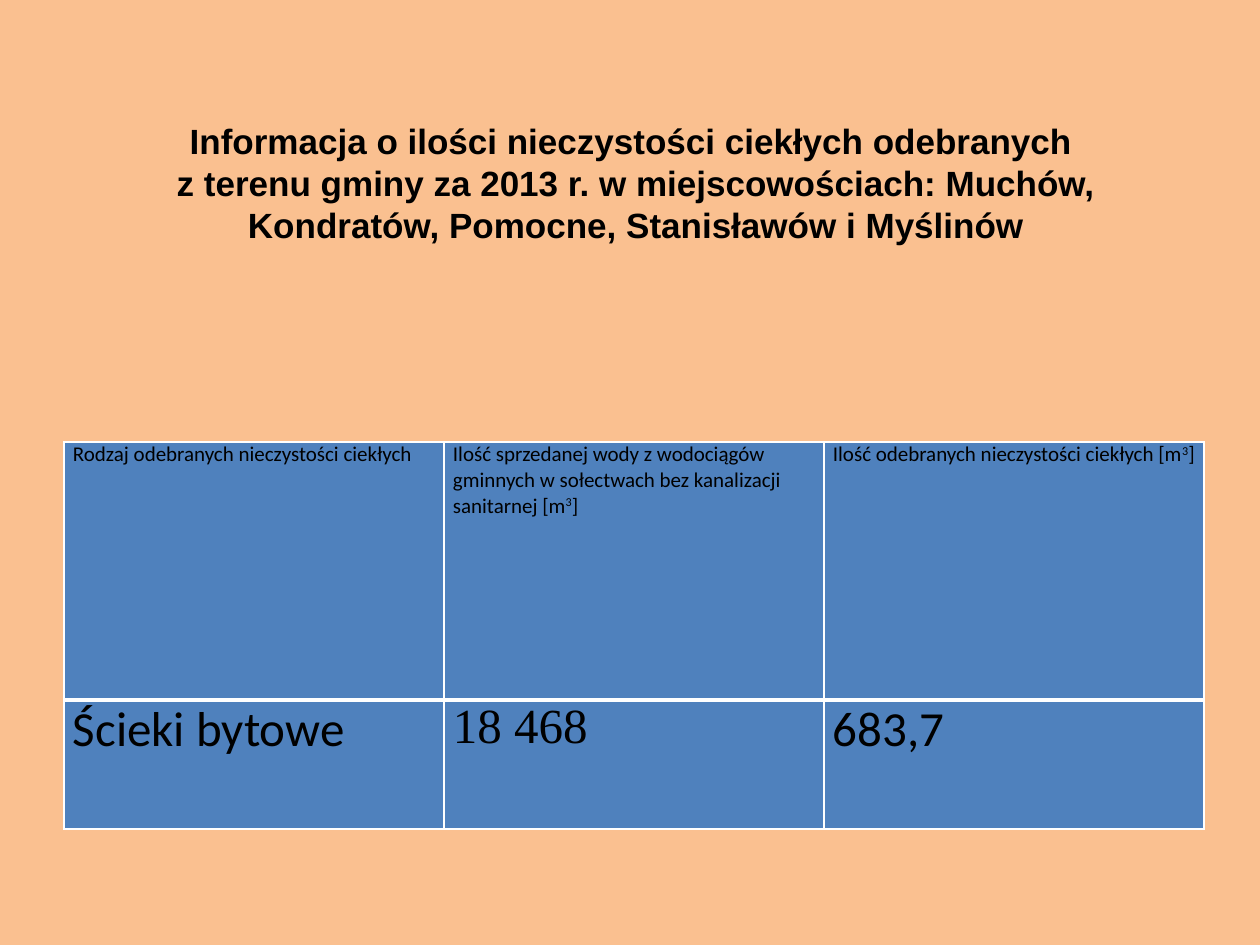
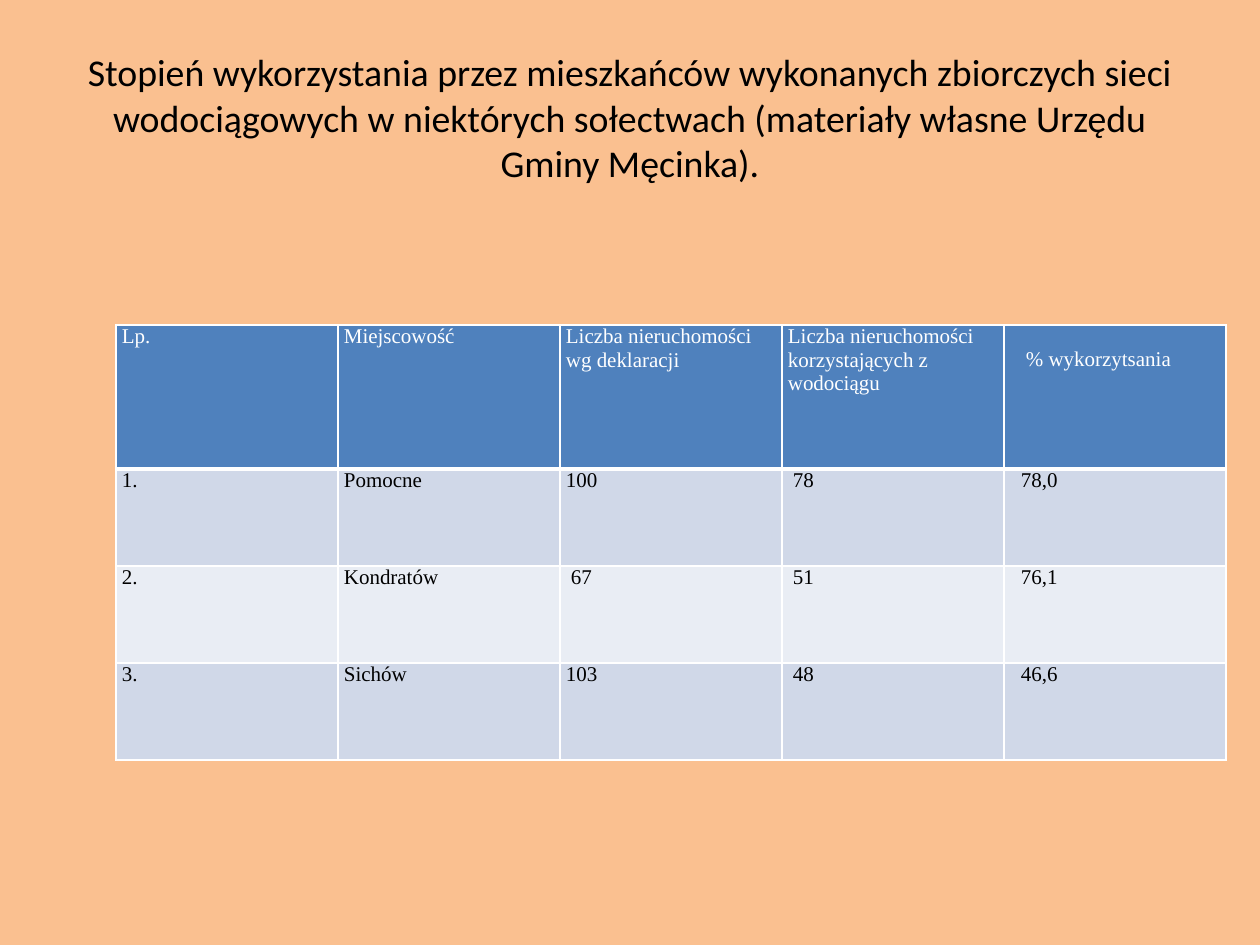
from lxml.etree import SubElement
from pptx import Presentation
from pptx.dml.color import RGBColor
from pptx.enum.text import MSO_ANCHOR, PP_ALIGN
from pptx.oxml import parse_xml
from pptx.oxml.ns import nsdecls
from pptx.util import Pt

PX = 914400 / 126
PEACH = RGBColor(0xFA, 0xC0, 0x90)
BLUE = RGBColor(0x4F, 0x81, 0xBD)
BAND_DARK = RGBColor(0xD0, 0xD8, 0xE8)
BAND_LIGHT = RGBColor(0xE9, 0xED, 0xF4)
BLACK = RGBColor(0, 0, 0)
WHITE = RGBColor(0xFF, 0xFF, 0xFF)
SANS, ARIAL, SERIF = "Calibri", "Arial", "Times New Roman"


def px(n):
    return round(n * PX)


def write(p, text, font=SANS, size=12, color=BLACK, bold=False, align=None):
    p.alignment = align
    for i, part in enumerate(text.split("^")):
        r = p.add_run()
        r.text = part
        r.font.name, r.font.size, r.font.bold = font, Pt(size), bold
        r.font.color.rgb = color
        if i % 2:
            r.font._element.set("baseline", "30000")


def add_slide(prs):
    s = prs.slides.add_slide(prs.slide_layouts[6])
    s.background.fill.solid()
    s.background.fill.fore_color.rgb = PEACH
    return s


def add_title(s, box, lines, anchor, **fmt):
    tf = s.shapes.add_textbox(*map(px, box)).text_frame
    tf.word_wrap = True
    tf.vertical_anchor = anchor
    for i, line in enumerate(lines):
        p = tf.add_paragraph() if i else tf.paragraphs[0]
        write(p, line, align=PP_ALIGN.CENTER, **fmt)


def set_borders(cell, top=1, bottom=1):
    tcPr = cell._tc.get_or_add_tcPr()
    widths = {"lnL": 1, "lnR": 1, "lnT": top, "lnB": bottom}
    for i, (side, width) in enumerate(widths.items()):
        ln = parse_xml(f'<a:{side} {nsdecls("a")} w="{Pt(width)}"/>')
        fill = SubElement(ln, ln.tag.replace(side, "solidFill"))
        SubElement(fill, ln.tag.replace(side, "srgbClr"), val=str(WHITE))
        tcPr.insert(i, ln)


def add_table(s, left, top, col_width, heights, n_cols):
    shape = s.shapes.add_table(len(heights), n_cols, px(left), px(top),
                               px(col_width * n_cols), px(sum(heights)))
    table = shape.table
    table.first_row = table.horz_banding = False
    for col in table.columns:
        col.width = px(col_width)
    for row, height in zip(table.rows, heights):
        row.height = px(height)
    return table


def fill_cell(cell, text, fill, inset, indent=0, drop=0, top=1, bottom=1, **fmt):
    cell.margin_left, cell.margin_right = px(inset + indent), px(inset)
    cell.margin_top, cell.margin_bottom = px(drop), 0
    cell.fill.solid()
    cell.fill.fore_color.rgb = fill
    set_borders(cell, top, bottom)
    write(cell.text_frame.paragraphs[0], text, **fmt)


def waste_slide(prs):
    s = add_slide(prs)
    add_title(s, (105, 113, 1062, 178),
              ["Informacja o ilości nieczystości ciekłych odebranych ",
               "z terenu gminy za 2013 r. w miejscowościach: Muchów, "
               "Kondratów, Pomocne, Stanisławów i Myślinów"],
              MSO_ANCHOR.TOP, font=ARIAL, size=20, bold=True)
    headers = ["Rodzaj odebranych nieczystości ciekłych",
               "Ilość sprzedanej wody z wodociągów gminnych w sołectwach "
               "bez kanalizacji sanitarnej [m^3^]",
               "Ilość odebranych nieczystości ciekłych [m^3^]"]
    amounts = [("Ścieki bytowe", SANS), ("18 468", SERIF), ("683,7", SANS)]
    table = add_table(s, 64, 442, 380, [258, 129], len(headers))
    for c, (header, (amount, font)) in enumerate(zip(headers, amounts)):
        fill_cell(table.cell(0, c), header, BLUE, 9, bottom=3)
        fill_cell(table.cell(1, c), amount, BLUE, 9, top=3, font=font, size=28)


def usage_slide(prs):
    s = add_slide(prs)
    add_title(s, (63, 38, 1134, 158),
              ["Stopień wykorzystania przez mieszkańców wykonanych zbiorczych "
               "sieci wodociągowych w niektórych sołectwach (materiały własne "
               "Urzędu Gminy Męcinka)."],
              MSO_ANCHOR.MIDDLE, size=21.6)
    headers = ["Lp.", "Miejscowość", "Liczba nieruchomości wg deklaracji",
               "Liczba nieruchomości korzystających z wodociągu",
               "% wykorzytsania"]
    villages = [("1.", "Pomocne", "100", "78", "78,0"),
                ("2.", "Kondratów", "67", "51", "76,1"),
                ("3.", "Sichów", "103", "48", "46,6")]
    table = add_table(s, 116, 325, 222, [144] + [97] * len(villages), len(headers))
    last = len(headers) - 1
    for c, header in enumerate(headers):
        indent, drop = (16, 23) if c == last else (0, 0)
        fill_cell(table.cell(0, c), header, BLUE, 6, indent, drop, bottom=3,
                  font=SERIF, color=WHITE)
    for r, village in enumerate(villages, 1):
        for c, value in enumerate(village):
            indent = 11 if c == last else 5 if c > 1 and len(value) == 2 else 0
            fill_cell(table.cell(r, c), value, BAND_DARK if r % 2 else BAND_LIGHT,
                      6, indent, font=SERIF)


def main():
    prs = Presentation()
    prs.slide_width, prs.slide_height = px(1260), px(945)
    waste_slide(prs)
    usage_slide(prs)
    prs.save("out.pptx")


if __name__ == "__main__":
    main()
